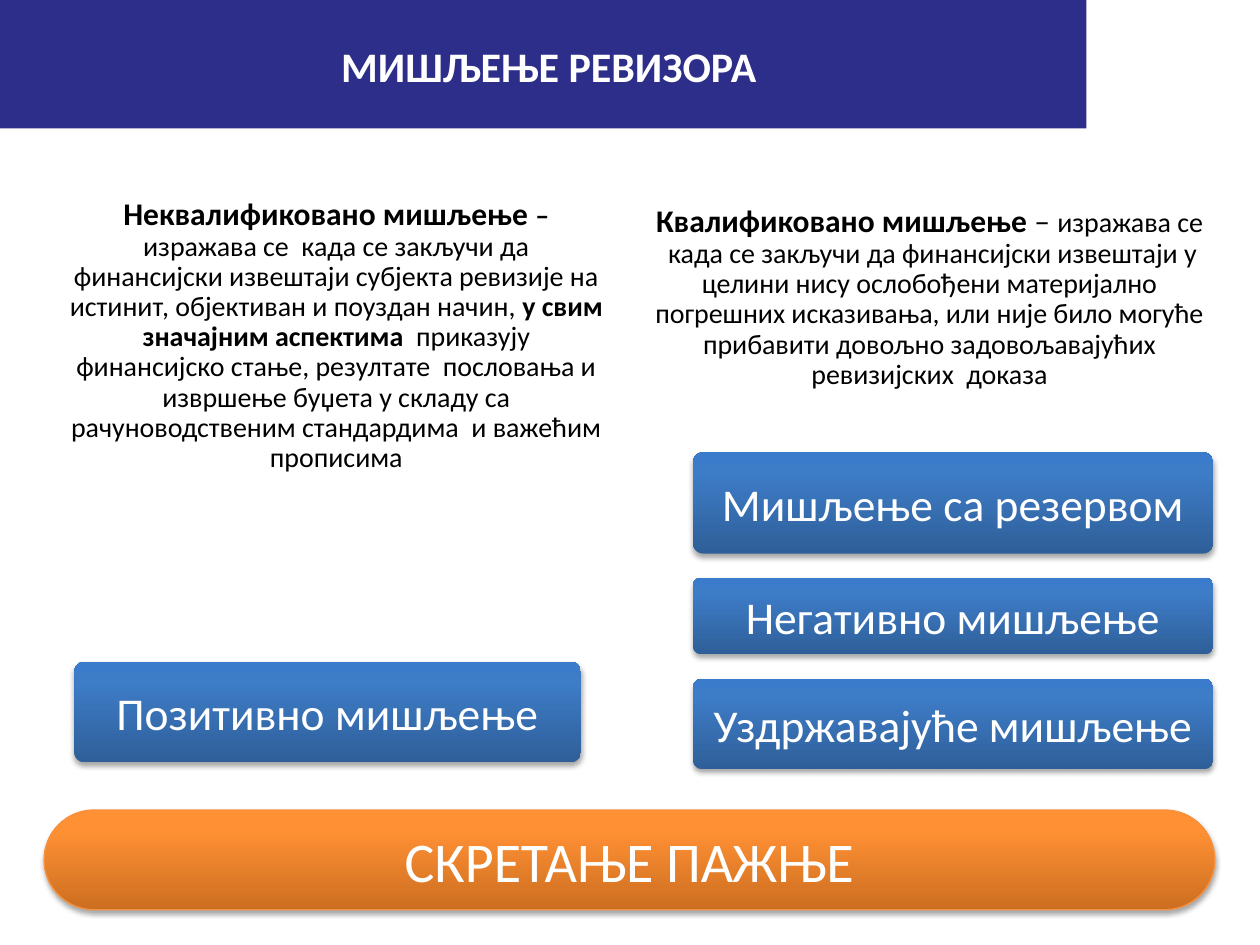
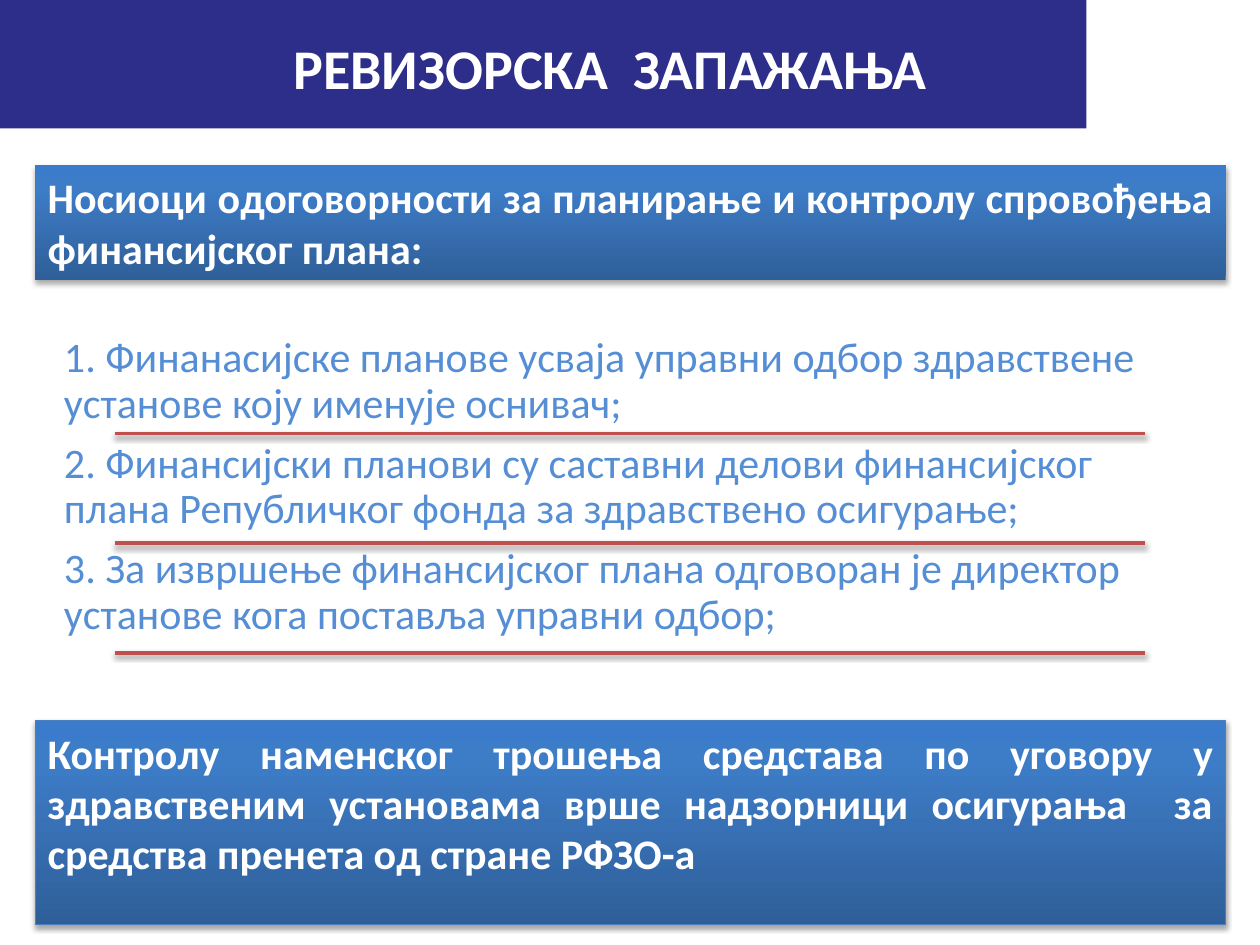
from lxml.etree import SubElement
from pptx import Presentation
from pptx.dml.color import RGBColor
from pptx.enum.shapes import MSO_CONNECTOR, MSO_SHAPE
from pptx.enum.text import MSO_ANCHOR, MSO_AUTO_SIZE, PP_ALIGN
from pptx.oxml.ns import qn
from pptx.util import Cm, Pt

FONT = "Calibri"
NAVY = RGBColor(0x2D, 0x2D, 0x8A)
WHITE = RGBColor(0xFF, 0xFF, 0xFF)
BLACK = RGBColor(0x00, 0x00, 0x00)
SKY = RGBColor(0x55, 0x8E, 0xD5)
RED = RGBColor(0xC0, 0x50, 0x4D)
BLUE_EDGE = RGBColor(0x4B, 0x7E, 0xBC)
ORANGE_EDGE = RGBColor(0xF6, 0x92, 0x40)
BLUE_STOPS = (
    (0, RGBColor(0x2F, 0x5F, 0x99)),
    (80, RGBColor(0x3D, 0x7C, 0xC7)),
    (100, RGBColor(0x3A, 0x7C, 0xCB)),
)
ORANGE_STOPS = (
    (0, RGBColor(0xCC, 0x6E, 0x20)),
    (80, RGBColor(0xFF, 0x90, 0x34)),
    (100, RGBColor(0xFF, 0x91, 0x36)),
)


def to_cm(box):
    return [Cm(length) for length in box]


def place(shape, box):
    shape.left, shape.top, shape.width, shape.height = to_cm(box)


def style_font(font, size, color, bold=False):
    font.name = FONT
    font.size = Pt(size)
    font.color.rgb = color
    font.bold = bold


def set_frame(frame, anchor, inset_x=0.25, inset_y=0.13):
    frame.word_wrap = True
    frame.auto_size = MSO_AUTO_SIZE.NONE
    frame.vertical_anchor = anchor
    frame.margin_left = frame.margin_right = Cm(inset_x)
    frame.margin_top = frame.margin_bottom = Cm(inset_y)


def plain_paragraph(para, align, indent=0, space_after=0):
    properties = para._p.get_or_add_pPr()
    properties.set("marL", str(Cm(indent)))
    properties.set("indent", "0")
    SubElement(properties, qn("a:buNone"))
    para.alignment = align
    para.line_spacing = 0.9
    para.space_before = Pt(0)
    para.space_after = Pt(space_after)


def add_shadow(shape, alpha, distance):
    effects = SubElement(shape._element.spPr, qn("a:effectLst"))
    shadow = SubElement(
        effects, qn("a:outerShdw"), blurRad=str(Pt(3.1)), dist=str(Pt(distance)),
        dir="5400000", rotWithShape="0",
    )
    color = SubElement(shadow, qn("a:srgbClr"), val=str(BLACK))
    SubElement(color, qn("a:alpha"), val=str(alpha * 1000))


def fill_gradient(shape, stops):
    shape.fill.gradient()
    gradient = shape._element.spPr.find(qn("a:gradFill"))
    for child in list(gradient):
        gradient.remove(child)
    stop_list = SubElement(gradient, qn("a:gsLst"))
    for position, color in stops:
        stop = SubElement(stop_list, qn("a:gs"), pos=str(position * 1000))
        SubElement(stop, qn("a:srgbClr"), val=str(color))
    SubElement(gradient, qn("a:lin"), ang="16200000", scaled="0")


def add_glossy(page, kind, box, text, size, stops, edge=None, rounding=None,
               bold=False, align=PP_ALIGN.CENTER, anchor=MSO_ANCHOR.MIDDLE, inset_x=0.18):
    shape = page.shapes.add_shape(kind, *to_cm(box))
    if rounding is not None:
        shape.adjustments[0] = rounding
    fill_gradient(shape, stops)
    if edge is None:
        shape.line.fill.background()
    else:
        shape.line.color.rgb = edge
        shape.line.width = Pt(0.75)
    add_shadow(shape, 35, 1.8)
    set_frame(shape.text_frame, anchor, inset_x)
    para = shape.text_frame.paragraphs[0]
    para.text = text
    para.alignment = align
    style_font(para.runs[0].font, size, WHITE, bold)


def add_button(page, box, text):
    add_glossy(page, MSO_SHAPE.ROUNDED_RECTANGLE, box, text, 26, BLUE_STOPS, rounding=0.1)


def add_banner(page, box, text, edge=None):
    add_glossy(page, MSO_SHAPE.RECTANGLE, box, text, 24, BLUE_STOPS, edge, bold=True,
               align=PP_ALIGN.JUSTIFY, anchor=MSO_ANCHOR.TOP, inset_x=0.25)


def add_master_band(page):
    band = page.shapes.add_shape(MSO_SHAPE.RECTANGLE, *to_cm((-0.05, 0, 21.95, 2.59)))
    band.fill.solid()
    band.fill.fore_color.rgb = NAVY
    band.line.fill.background()
    band.shadow.inherit = False
    page.slide_layout.slide_master.shapes._spTree.insert(2, band._element)


def set_title(page, box, text, size):
    title = page.shapes.title
    place(title, box)
    set_frame(title.text_frame, MSO_ANCHOR.MIDDLE)
    para = title.text_frame.paragraphs[0]
    para.text = text
    para.alignment = PP_ALIGN.CENTER
    style_font(para.runs[0].font, size, WHITE, True)


def fill_definition(body, box, spans, indent=0):
    place(body, box)
    set_frame(body.text_frame, MSO_ANCHOR.TOP, 0.18, 0.18)
    para = body.text_frame.paragraphs[0]
    plain_paragraph(para, PP_ALIGN.CENTER, indent)
    for text, size, bold in spans:
        span = para.add_run()
        span.text = text
        style_font(span.font, size, BLACK, bold)


def fill_duties(page, body, box, duties):
    left, top, width, height = box
    place(body, box)
    set_frame(body.text_frame, MSO_ANCHOR.MIDDLE, 0.2, 0.2)
    body.text_frame.text = "\n".join(duties)
    for para in body.text_frame.paragraphs:
        plain_paragraph(para, PP_ALIGN.LEFT, space_after=8.4)
        style_font(para.runs[0].font, 24, SKY)
    for index in range(len(duties)):
        y = Cm(top + 2.24 + index * 2.21)
        rule = page.shapes.add_connector(
            MSO_CONNECTOR.STRAIGHT, Cm(left + 1.22), y, Cm(left + width - 1.02), y)
        rule.line.color.rgb = RED
        rule.line.width = Pt(2)
        add_shadow(rule, 38, 1.6)


def build_opinions(page):
    set_title(page, (0.64, 0.69, 20.85, 1.27), "МИШЉЕЊЕ РЕВИЗОРА", 24)
    fill_definition(page.placeholders[1], (0.89, 3.81, 11.48, 8), (
        ("Неквалификовано мишљење ", 18, True),
        ("– ", 16, True),
        ("изражава се  када се закључи да финансијски извештаји субјекта ревизије "
         "на истинит, објективан и поуздан начин, ", 16, False),
        ("у свим значајним аспектима", 16, True),
        ("  приказују финансијско стање, резултате  пословања и извршење буџета у складу "
         "са рачуноводственим стандардима  и важећим прописима", 16, False),
    ), indent=0.3)
    fill_definition(page.placeholders[2], (13, 3.96, 11.48, 4.9), (
        ("Квалификовано мишљење ", 18, True),
        ("– ", 18, False),
        ("изражава се  када се закључи да финансијски извештаји у целини нису ослобођени "
         "материјално погрешних исказивања, или није било могуће прибавити довољно "
         "задовољавајућих ревизијских  доказа", 16, False),
    ))
    add_button(page, (1.5, 13.34, 10.21, 2.03), "Позитивно мишљење")
    top = 9.12
    for text, height in (
        ("Мишљење са резервом", 2.04),
        ("Негативно мишљење", 1.54),
        ("Уздржавајуће мишљење", 1.83),
    ):
        add_button(page, (13.97, top, 10.49, height), text)
        top += height + 0.49
    add_glossy(page, MSO_SHAPE.ROUNDED_RECTANGLE, (0.89, 16.33, 23.6, 2.01),
               "СКРЕТАЊЕ ПАЖЊЕ", 32, ORANGE_STOPS, ORANGE_EDGE, rounding=0.5)


def build_observations(page):
    set_title(page, (4.9, 0.53, 14.81, 1.63), "РЕВИЗОРСКА  ЗАПАЖАЊА", 32)
    add_banner(page, (0.71, 3.33, 24, 2.31),
               "Носиоци одоговорности за планирање и контролу спровођења финансијског плана:")
    fill_duties(page, page.placeholders[1], (1.09, 6.5, 23.01, 6.65), (
        "1. Финанасијске планове усваја управни одбор здравствене установе "
        "коју именује оснивач;",
        "2. Финансијски планови су саставни делови финансијског плана "
        "Републичког фонда за здравствено осигурање;",
        "3. За извршење финансијског плана одговоран је директор установе "
        "кога поставља управни одбор;",
    ))
    add_banner(page, (0.71, 14.53, 24, 4.11),
               "Контролу наменског трошења средстава по уговору у здравственим установама "
               "врше надзорници осигурања  за средства пренета од стране РФЗО-а", BLUE_EDGE)


def main():
    deck = Presentation()
    deck.slide_width, deck.slide_height = Cm(25.4), Cm(19.05)
    opinions = deck.slides.add_slide(deck.slide_layouts.get_by_name("Two Content"))
    add_master_band(opinions)
    build_opinions(opinions)
    build_observations(
        deck.slides.add_slide(deck.slide_layouts.get_by_name("Title and Content")))
    deck.save("out.pptx")


if __name__ == "__main__":
    main()
